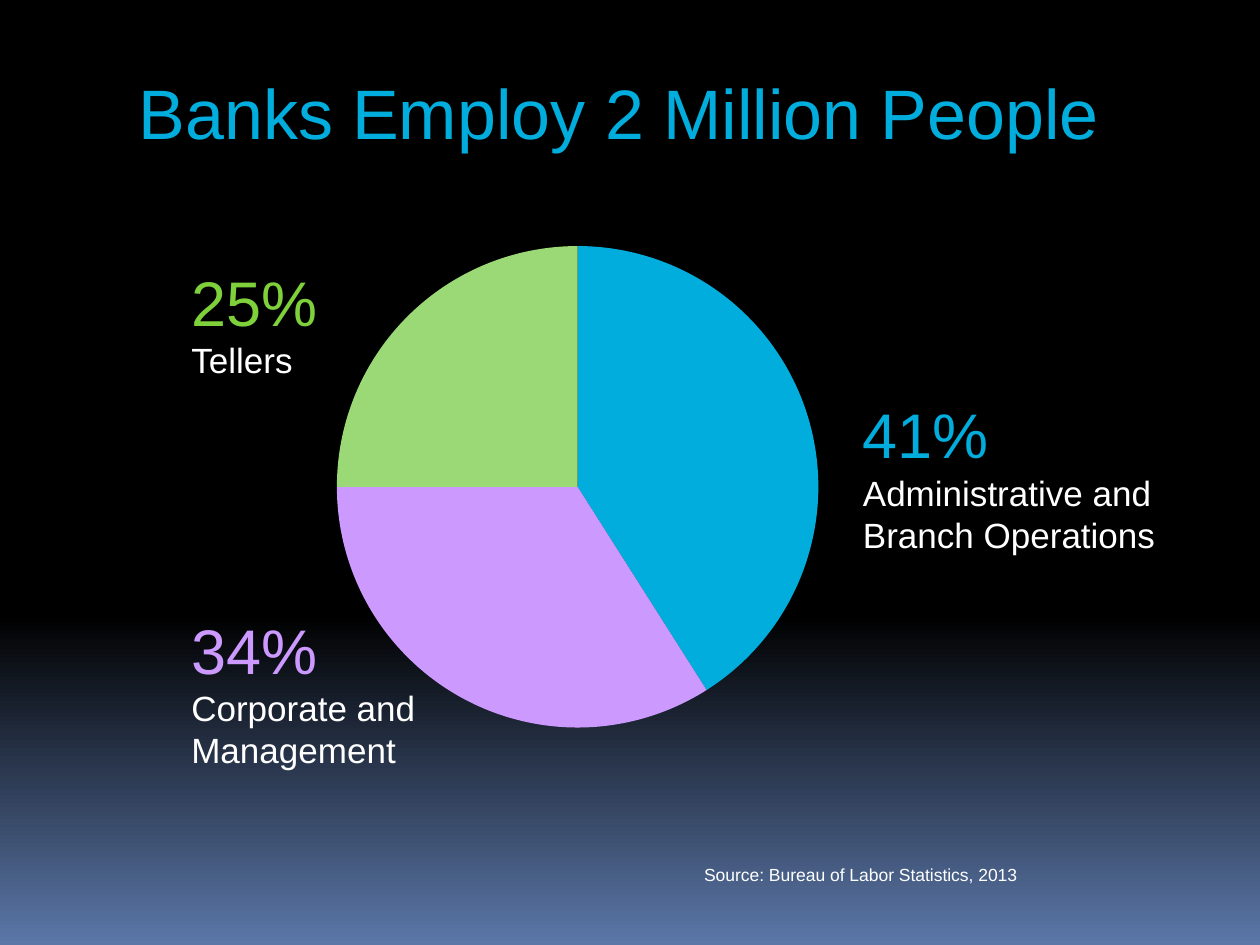
from copy import deepcopy

from pptx import Presentation
from pptx.chart.data import CategoryChartData
from pptx.dml.color import RGBColor
from pptx.enum.chart import XL_CHART_TYPE as ChartType
from pptx.enum.text import MSO_ANCHOR as Anchor, PP_ALIGN as Align
from pptx.oxml import parse_xml
from pptx.oxml.ns import nsdecls, qn
from pptx.util import Inches, Pt

FONT = "Arial"
COLORS = {
    "black": "000000",
    "horizon": "5B77A8",
    "white": "FFFFFF",
    "operations": "00ADDC",
    "management": "CC99FF",
    "tellers": "7FD13B",
    "tellers_slice": "9BD976",
}


def rgb(name):
    return RGBColor.from_string(COLORS[name])


def add_run(paragraph, text, size, color):
    run = paragraph.add_run()
    run.text = text
    run.font.name = FONT
    run.font.size = Pt(size)
    run.font.color.rgb = rgb(color)


def set_background(slide):
    fill = slide.background.fill
    fill.gradient()
    fill.gradient_angle = 270
    # The default gradient has two stops; add a third
    stop_list = slide._element.find(".//" + qn("a:gsLst"))
    stop_list.append(deepcopy(stop_list[0]))
    stops = [(0, "black"), (0.65, "black"), (1, "horizon")]
    for stop, (position, color) in zip(fill.gradient_stops, stops):
        stop.position = position
        stop.color.rgb = rgb(color)


def set_title(slide, text):
    title = slide.shapes.title
    title.left, title.top = Inches(1), Inches(0.56)
    title.width, title.height = Inches(8.5), Inches(1)
    title.text_frame.vertical_anchor = Anchor.TOP
    paragraph = title.text_frame.paragraphs[0]
    paragraph.alignment = Align.LEFT
    paragraph.line_spacing = Pt(44)
    add_run(paragraph, text, 40, "operations")


def add_pie(slide, values, slice_colors):
    data = CategoryChartData()
    data.categories = [str(n + 1) for n in range(len(values))]
    data.add_series("Series 1", values)
    chart = slide.shapes.add_chart(
        ChartType.PIE, Inches(1.5), Inches(1.83), Inches(6.17), Inches(4.11), data
    ).chart
    chart.has_legend = False
    chart.has_title = False
    chart.font.name = FONT
    chart.font.size = Pt(18)
    chart.font.color.rgb = rgb("white")

    pie = chart.plots[0]
    pie.vary_by_categories = True
    for index, color in enumerate(slice_colors):
        slice_format = pie.series[0].points[index].format
        slice_format.fill.solid()
        slice_format.fill.fore_color.rgb = rgb(color)
        slice_format.line.fill.background()

    # Fix the pie's place inside the chart frame
    plot_area = chart._chartSpace.chart.plotArea
    for layout in plot_area.findall(qn("c:layout")):
        plot_area.remove(layout)
    plot_area.insert(0, parse_xml(
        f'<c:layout {nsdecls("c")}><c:manualLayout>'
        '<c:layoutTarget val="inner"/><c:xMode val="edge"/><c:yMode val="edge"/>'
        '<c:x val="0.19"/><c:y val="0.03"/><c:w val="0.62"/><c:h val="0.93"/>'
        '</c:manualLayout></c:layout>'))


def add_text(slide, left, top, width, height, lines, align=Align.LEFT):
    box = slide.shapes.add_textbox(
        Inches(left), Inches(top), Inches(width), Inches(height))
    frame = box.text_frame
    frame.word_wrap = True
    for index, (text, size, color) in enumerate(lines):
        paragraph = frame.add_paragraph() if index else frame.paragraphs[0]
        paragraph.alignment = align
        add_run(paragraph, text, size, color)


def add_share(slide, left, top, width, height, share, color, jobs):
    lines = [(f"{share}%", 36, color)] + [(job, 20, "white") for job in jobs]
    add_text(slide, left, top, width, height, lines)


def main():
    prs = Presentation()
    prs.slide_width, prs.slide_height = Inches(10), Inches(7.5)
    slide = prs.slides.add_slide(prs.slide_layouts[5])
    set_background(slide)

    # Pie of job groups
    add_pie(slide, [41, 34, 25], ["operations", "management", "tellers_slice"])
    set_title(slide, "Banks Employ 2 Million People")

    # Source line
    add_text(slide, 2.17, 6.81, 6, 0.27,
             [("Source: Bureau of Labor Statistics, 2013", 10, "white")], Align.RIGHT)

    # Labels beside the slices
    add_share(slide, 1.42, 2.04, 1.75, 1.04, 25, "tellers", ["Tellers"])
    add_share(slide, 6.75, 3.09, 3.75, 1.38, 41, "operations",
              ["Administrative and", "Branch Operations"])
    add_share(slide, 1.42, 4.8, 2.5, 1.38, 34, "management",
              ["Corporate and Management"])

    prs.save("out.pptx")


if __name__ == "__main__":
    main()
